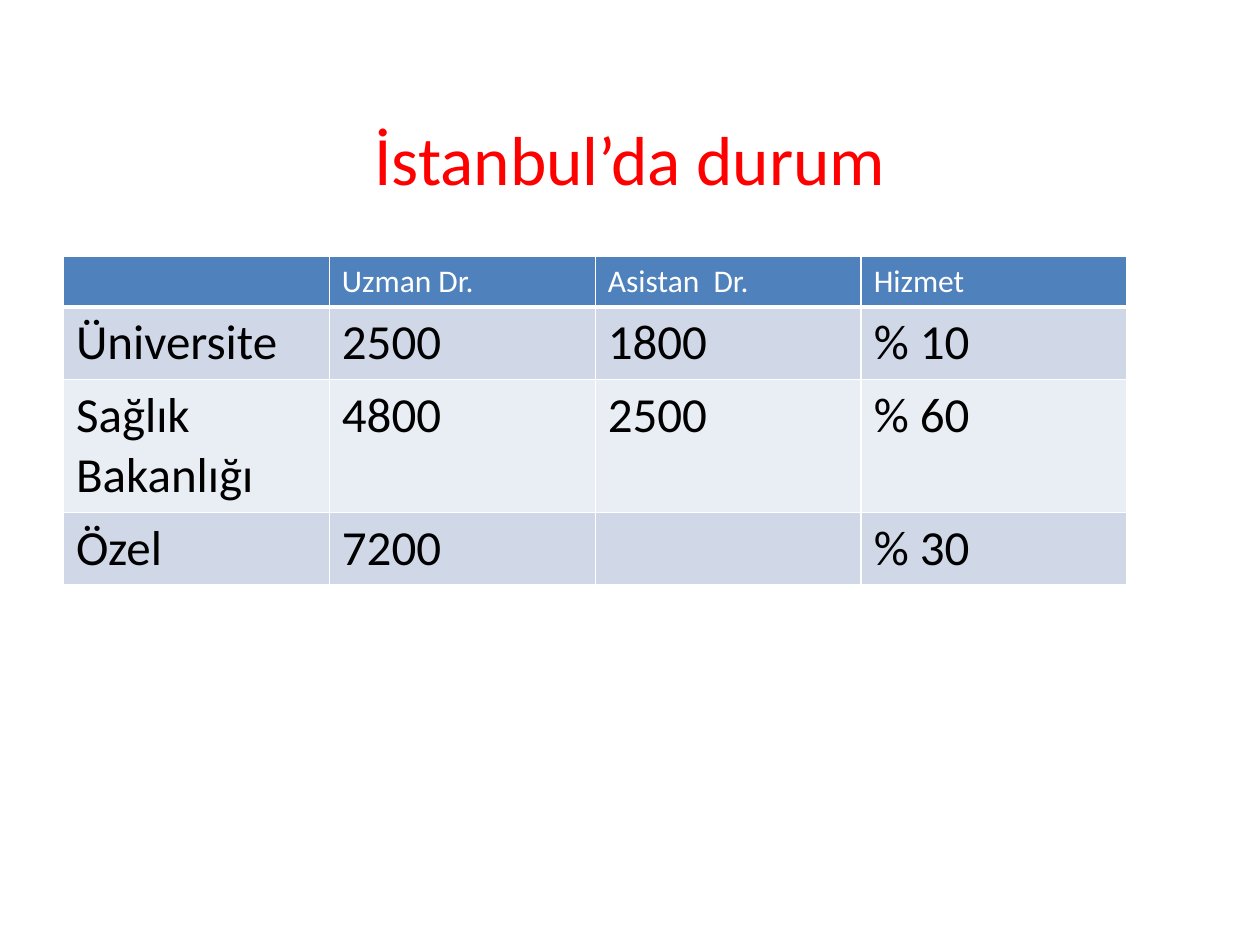
from copy import deepcopy

from lxml.etree import SubElement as Sub
from pptx import Presentation
from pptx.dml.color import RGBColor as RGB
from pptx.enum.text import MSO_ANCHOR, MSO_AUTO_SIZE, PP_ALIGN
from pptx.oxml.ns import qn
from pptx.util import Cm, Pt

RED = RGB(0xFF, 0x00, 0x00)
WHITE = RGB(0xFF, 0xFF, 0xFF)
BLACK = RGB(0x00, 0x00, 0x00)
BLUE = RGB(0x4F, 0x81, 0xBD)
BAND_DARK = RGB(0xD0, 0xD8, 0xE8)
BAND_LIGHT = RGB(0xE9, 0xED, 0xF4)

ROWS = [
    ("", "Uzman Dr.", "Asistan  Dr.", "Hizmet"),
    ("Üniversite", "2500", "1800", "% 10"),
    ("Sağlık Bakanlığı", "4800", "2500", "% 60"),
    ("Özel", "7200", "", "% 30"),
]
ROW_HEIGHTS = (1.02, 1.45, 2.68, 1.45)


def set_attrs(obj, **values):
    for name, value in values.items():
        setattr(obj, name, value)


def add_text(p, text, size, color):
    r = p.add_run()
    r.text = text
    set_attrs(r.font, name="Calibri", size=Pt(size))
    r.font.color.rgb = color
    return r


def place_title(s, left, top, width, height):
    sp = s.shapes.title
    set_attrs(sp, left=Cm(left), top=Cm(top), width=Cm(width), height=Cm(height))
    tf = sp.text_frame
    set_attrs(tf, word_wrap=True, auto_size=MSO_AUTO_SIZE.NONE,
              vertical_anchor=MSO_ANCHOR.MIDDLE)
    p = tf.paragraphs[0]
    p.alignment = PP_ALIGN.CENTER
    p.add_line_break()
    r = add_text(p, "İstanbul’da durum", 39.6, RED)
    p._p.find(qn("a:br")).append(deepcopy(r._r.rPr))


def set_borders(cell, color, widths):
    tc_pr = cell._tc.get_or_add_tcPr()
    for side, width in widths.items():
        ln = Sub(tc_pr, qn(f"a:ln{side}"), w=str(Pt(width)))
        fill = Sub(ln, qn("a:solidFill"))
        Sub(fill, qn("a:srgbClr"), val=str(color))


def place_table(s, left, top, width):
    frame = s.shapes.add_table(len(ROWS), len(ROWS[0]), Cm(left), Cm(top),
                               Cm(width), Cm(sum(ROW_HEIGHTS)))
    table = frame.table
    for col in table.columns:
        col.width = Cm(width / len(ROWS[0]))
    for i, (values, height) in enumerate(zip(ROWS, ROW_HEIGHTS)):
        table.rows[i].height = Cm(height)
        header = i == 0
        band = BLUE if header else (BAND_LIGHT, BAND_DARK)[i % 2]
        size, color = (18, WHITE) if header else (28, BLACK)
        for j, value in enumerate(values):
            cell = table.cell(i, j)
            set_borders(cell, WHITE, dict(L=1, R=1, T=1, B=3 if header else 1))
            cell.fill.solid()
            cell.fill.fore_color.rgb = band
            if value:
                add_text(cell.text_frame.paragraphs[0], value, size, color)


def main():
    prs = Presentation()
    set_attrs(prs, slide_width=Cm(25.4), slide_height=Cm(19.05))
    s = prs.slides.add_slide(prs.slide_layouts[5])
    place_title(s, 1.27, 0.76, 22.86, 3.18)
    place_table(s, 1.28, 5.16, 21.44)
    prs.save("out.pptx")


if __name__ == "__main__":
    main()
